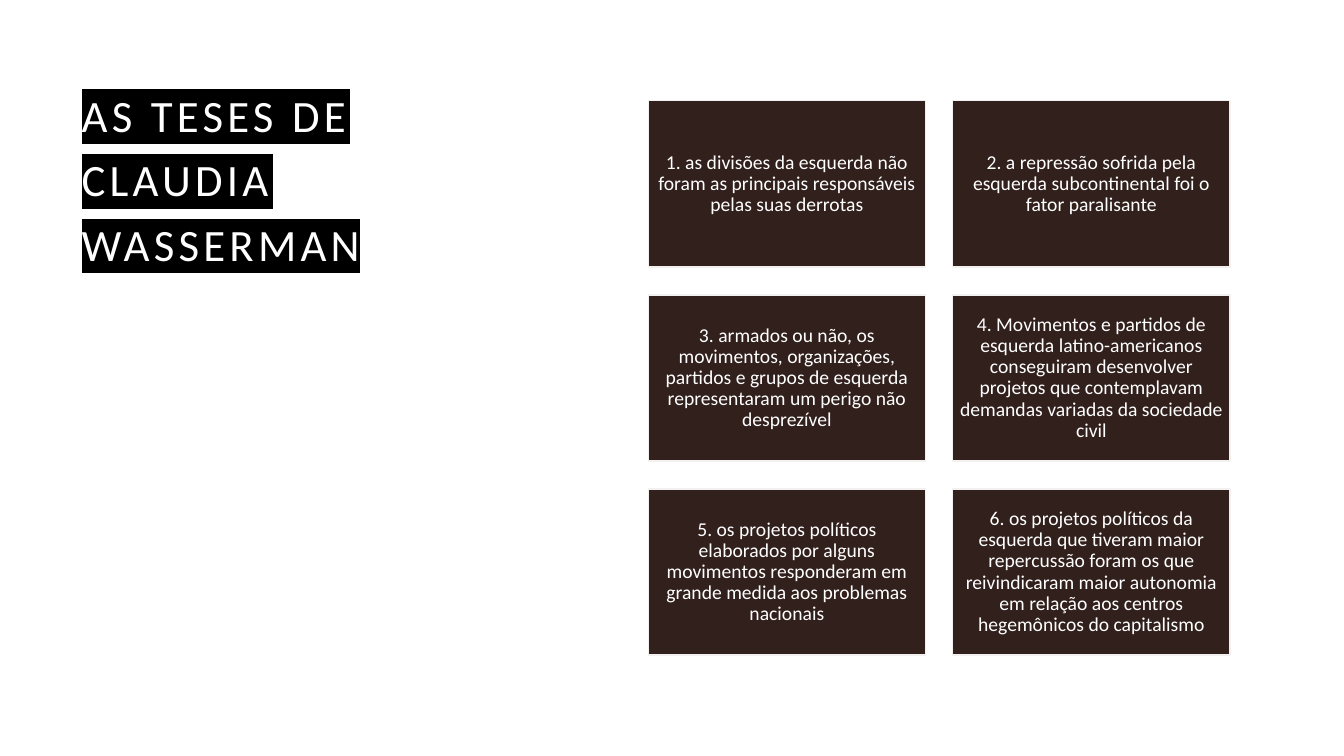
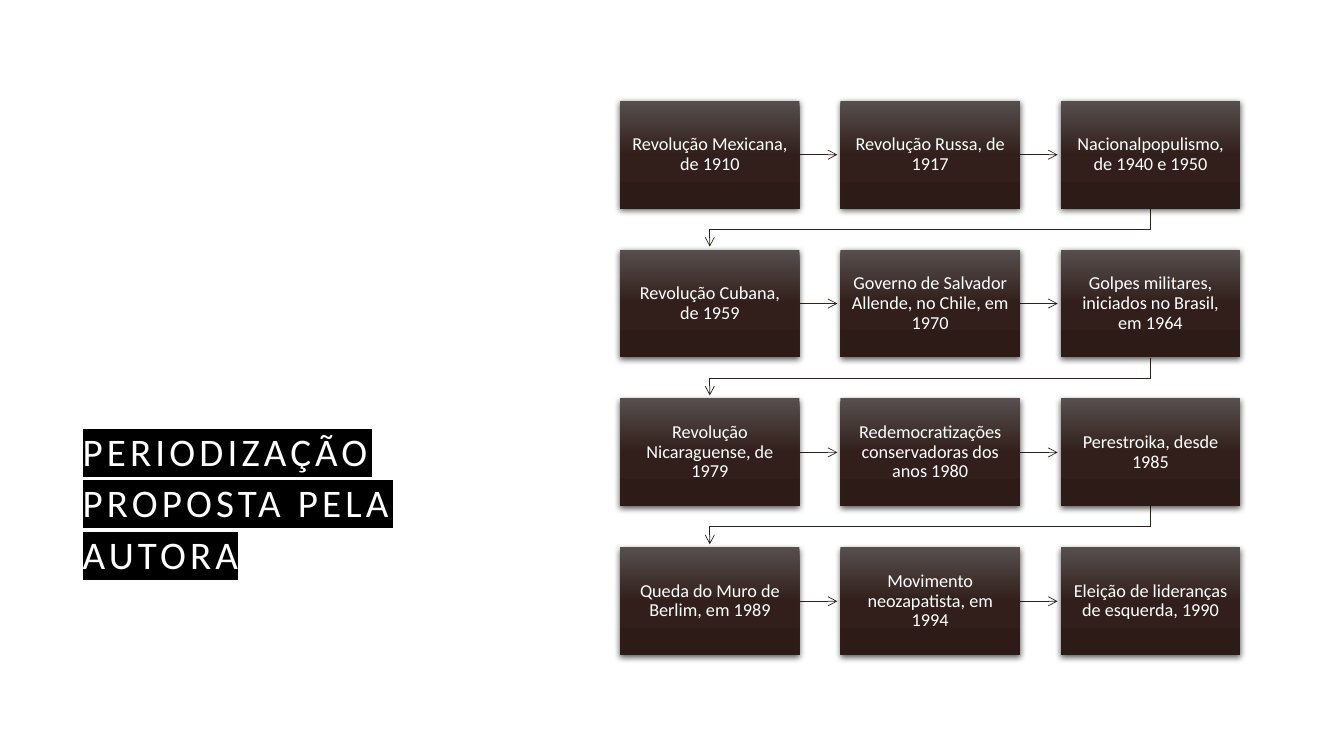
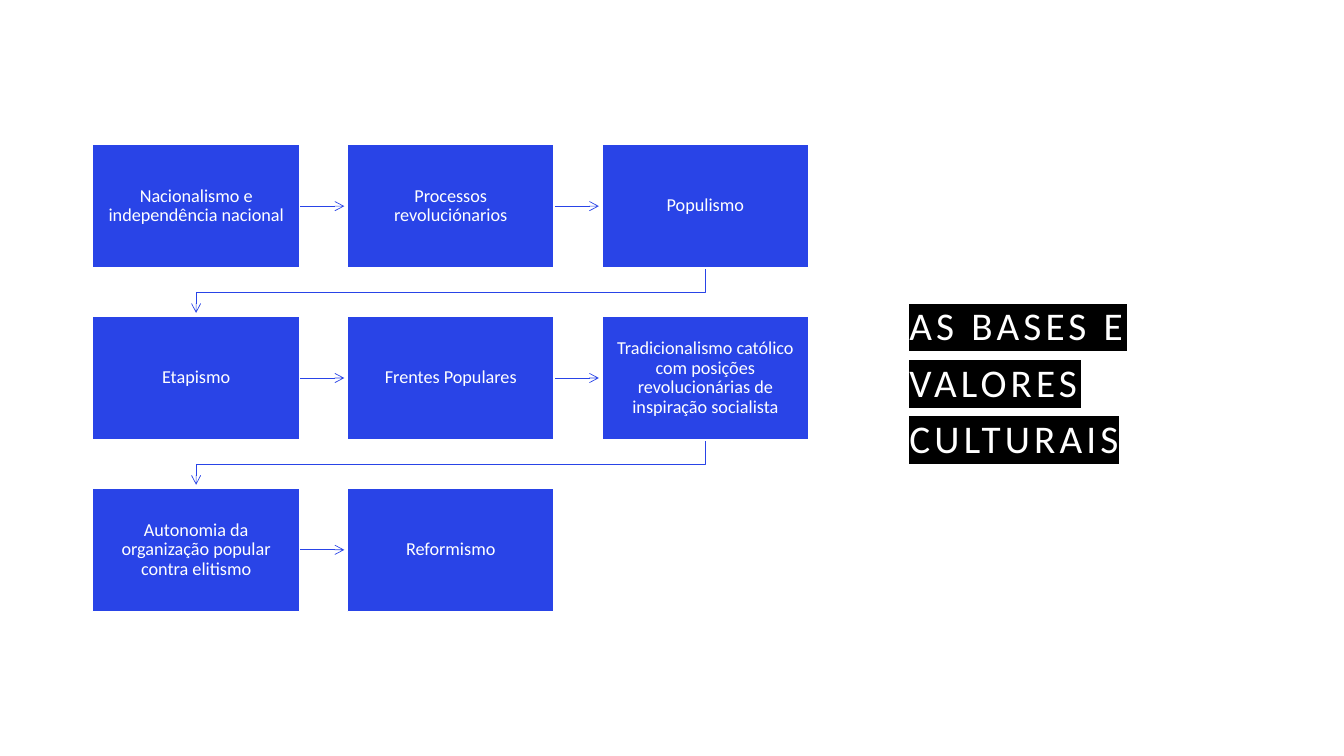
from dataclasses import dataclass
from typing import Any, Optional

from lxml import etree
from pptx import Presentation
from pptx.dml.color import RGBColor
from pptx.enum import shapes, text
from pptx.oxml import ns, parse_xml
from pptx.util import Inches, Pt

Point = tuple[float, float]


# Theme: colours, type sizes and shared measures
@dataclass(frozen=True)
class Theme:
    font: str = "Calibri"
    white: str = "FFFFFF"
    black: str = "000000"
    brown: str = "31201C"
    pale: str = "F3F0F0"
    blue: str = "2944E7"
    gradient: tuple = ((0, "564F4E"), (50, "321F1B"), (100, "2D1B17"))
    title_large: float = 32
    title_medium: float = 28
    title_small: float = 27.9
    body_large: float = 14
    body: float = 13
    title_tracking: float = 3
    arrow_width: float = 0.5
    arrow_gap: float = 0.03


THEME = Theme()


@dataclass(frozen=True)
class Title:
    words: str
    box: tuple[float, float, float, float]
    size: float
    spacing: float = 1.2
    anchor: Any = text.MSO_ANCHOR.TOP


@dataclass(frozen=True)
class CardStyle:
    size: float
    inset: tuple[float, float]
    fill: Optional[str] = None  # None gives the shaded gradient
    outline: Optional[str] = None
    arrow: Optional[str] = None


@dataclass(frozen=True)
class Grid:
    """Equal cards spread between the outer edges of an area."""
    left: float
    top: float
    right: float
    bottom: float
    width: float
    height: float
    columns: int
    rows: int

    def corner(self, index: int) -> Point:
        row, column = divmod(index, self.columns)
        step_x = (self.right - self.left - self.width) / (self.columns - 1)
        step_y = (self.bottom - self.top - self.height) / (self.rows - 1)
        return self.left + column * step_x, self.top + row * step_y


@dataclass(frozen=True)
class Page:
    title: Title
    grid: Grid
    style: CardStyle
    cards: tuple[str, ...]


def apply(target: Any, values: dict[str, Any]) -> None:
    for name, value in values.items():
        setattr(target, name, value)


def draw_xml(tag: str, inner: str, attributes: str = "") -> Any:
    return parse_xml(f'<a:{tag} {ns.nsdecls("a")} {attributes}>{inner}</a:{tag}>')


def colour_xml(colour: str, inner: str = "") -> str:
    return f'<a:srgbClr val="{colour}">{inner}</a:srgbClr>'


def write(tf: Any, words: str, size: float, spacing: float, align: Any) -> Any:
    p = tf.paragraphs[0]
    apply(p, {"alignment": align, "line_spacing": spacing})
    r = p.add_run()
    r.text = words
    apply(r.font, {"name": THEME.font, "size": Pt(size)})
    r.font.color.rgb = RGBColor.from_string(THEME.white)
    return r


def add_title(s: Any, title: Title) -> None:
    sp = s.shapes.title
    apply(sp, dict(zip(("left", "top", "width", "height"), map(Inches, title.box))))
    tf = sp.text_frame
    apply(tf, {"word_wrap": True, "auto_size": text.MSO_AUTO_SIZE.NONE,
               "vertical_anchor": title.anchor})
    r = write(tf, title.words, title.size, title.spacing, text.PP_ALIGN.LEFT)
    # Letter spacing and highlight
    props = r._r.get_or_add_rPr()
    props.set("spc", str(round(THEME.title_tracking * 100)))
    props.find(ns.qn("a:solidFill")).addnext(
        draw_xml("highlight", colour_xml(THEME.black)))


def shade(sp: Any) -> None:
    """Vertical three-stop gradient with a soft shadow below."""
    sp.fill.gradient()
    sp.fill.gradient_angle = 270
    stops = sp.element.spPr.find(".//" + ns.qn("a:gsLst"))
    stops.clear()
    for position, colour in THEME.gradient:
        stops.append(draw_xml("gs", colour_xml(colour), f'pos="{position * 1000}"'))
    shadow = colour_xml(THEME.black, '<a:alpha val="63000"/>')
    sp.element.spPr.find(ns.qn("a:effectLst")).append(draw_xml(
        "outerShdw", shadow,
        f'blurRad="{Pt(4.5)}" dist="{Pt(1.5)}" dir="5400000" algn="ctr" rotWithShape="0"'))


def add_card(s: Any, corner: Point, grid: Grid, style: CardStyle, words: str) -> None:
    sp = s.shapes.add_shape(shapes.MSO_SHAPE.RECTANGLE,
                            *map(Inches, (*corner, grid.width, grid.height)))
    sp.shadow.inherit = False
    if style.fill:
        sp.fill.solid()
        sp.fill.fore_color.rgb = RGBColor.from_string(style.fill)
    else:
        shade(sp)
    if style.outline:
        sp.line.color.rgb = RGBColor.from_string(style.outline)
        sp.line.width = Pt(1)
    else:
        sp.line.fill.background()
    side, end = map(Inches, style.inset)
    tf = sp.text_frame
    apply(tf, {"word_wrap": True, "vertical_anchor": text.MSO_ANCHOR.MIDDLE,
               "margin_left": side, "margin_right": side,
               "margin_top": end, "margin_bottom": end})
    write(tf, words, style.size, 0.9, text.PP_ALIGN.CENTER)


def add_arrow(s: Any, points: list[Point], colour: str) -> None:
    route = [(Inches(x), Inches(y)) for x, y in points]
    if len(route) == 2:
        line = s.shapes.add_connector(shapes.MSO_CONNECTOR.STRAIGHT, *route[0], *route[1])
    else:
        builder = s.shapes.build_freeform(*route[0])
        builder.add_line_segments(route[1:], close=False)
        line = builder.convert_to_shape()
        line.fill.background()
    line.line.color.rgb = RGBColor.from_string(colour)
    line.line.width = Pt(THEME.arrow_width)
    props = line.element.spPr
    etree.SubElement(props.find(ns.qn("a:ln")), ns.qn("a:tailEnd"), type="arrow")
    etree.SubElement(props, ns.qn("a:effectLst"))


def arrow_route(grid: Grid, index: int) -> list[Point]:
    """Path from one card to the next, across a row or down to a new one."""
    (x, y), (next_x, next_y) = grid.corner(index), grid.corner(index + 1)
    half_w, half_h = grid.width / 2, grid.height / 2
    if (index + 1) % grid.columns:
        return [(x + grid.width, y + half_h), (next_x - THEME.arrow_gap, y + half_h)]
    bottom = y + grid.height
    middle = (bottom + next_y) / 2
    return [(x + half_w, bottom), (x + half_w, middle),
            (next_x + half_w, middle), (next_x + half_w, next_y - THEME.arrow_gap)]


def add_page(prs: Any, page: Page) -> None:
    s = prs.slides.add_slide(prs.slide_layouts[5])
    add_title(s, page.title)
    if page.style.arrow:
        for index in range(len(page.cards) - 1):
            add_arrow(s, arrow_route(page.grid, index), page.style.arrow)
    for index, words in enumerate(page.cards):
        add_card(s, page.grid.corner(index), page.grid, page.style, words)


# Content
PAGES = (
    Page(
        Title("AS TESES DE CLAUDIA WASSERMAN", (0.71, 0.71, 3.74, 3.04), THEME.title_large),
        Grid(6.43, 1, 12.2, 6.5, 2.75, 1.65, columns=2, rows=3),
        CardStyle(THEME.body_large, (0.06, 0.06), THEME.brown, THEME.pale),
        (
            "1. as divisões da esquerda não foram as principais responsáveis "
            "pelas suas derrotas",
            "2. a repressão sofrida pela esquerda subcontinental foi o fator paralisante",
            "3. armados ou não, os movimentos, organizações, partidos e grupos de "
            "esquerda representaram um perigo não desprezível",
            "4. Movimentos e partidos de esquerda latino-americanos conseguiram "
            "desenvolver projetos que contemplavam demandas variadas da sociedade civil",
            "5. os projetos políticos elaborados por alguns movimentos responderam "
            "em grande medida aos problemas nacionais",
            "6. os projetos políticos da esquerda que tiveram maior repercussão foram "
            "os que reivindicaram maior autonomia em relação aos centros hegemônicos "
            "do capitalismo",
        ),
    ),
    Page(
        Title("PERIODIZAÇÃO PROPOSTA PELA AUTORA", (0.72, 4.14, 4.57, 1.77),
              THEME.title_small, spacing=1.1),
        Grid(6.15, 1, 12.3, 6.5, 1.78, 1.07, columns=3, rows=4),
        CardStyle(THEME.body, (0.09, 0.09), arrow=THEME.brown),
        (
            "Revolução Mexicana, de 1910",
            "Revolução Russa, de 1917",
            "Nacionalpopulismo, de 1940 e 1950",
            "Revolução Cubana, de 1959",
            "Governo de Salvador Allende, no Chile, em 1970",
            "Golpes militares, iniciados no Brasil, em 1964",
            "Revolução Nicaraguense, de 1979",
            "Redemocratizações conservadoras dos anos 1980",
            "Perestroika, desde 1985",
            "Queda do Muro de Berlim, em 1989",
            "Movimento neozapatista, em 1994",
            "Eleição de lideranças de esquerda, 1990",
        ),
    ),
    Page(
        Title("AS BASES E VALORES CULTURAIS", (8.92, 2.27, 3.7, 2.94),
              THEME.title_medium, anchor=text.MSO_ANCHOR.MIDDLE),
        Grid(0.92, 1.43, 8.02, 6.07, 2.05, 1.23, columns=3, rows=3),
        CardStyle(THEME.body, (0.1, 0.11), THEME.blue, THEME.white, THEME.blue),
        (
            "Nacionalismo e independência nacional",
            "Processos revoluciónarios",
            "Populismo",
            "Etapismo",
            "Frentes Populares",
            "Tradicionalismo católico com posições revolucionárias de "
            "inspiração socialista",
            "Autonomia da organização popular contra elitismo",
            "Reformismo",
        ),
    ),
)


def main() -> None:
    prs = Presentation()
    apply(prs, {"slide_width": Inches(13.33), "slide_height": Inches(7.5)})
    for page in PAGES:
        add_page(prs, page)
    prs.save("out.pptx")


if __name__ == "__main__":
    main()
